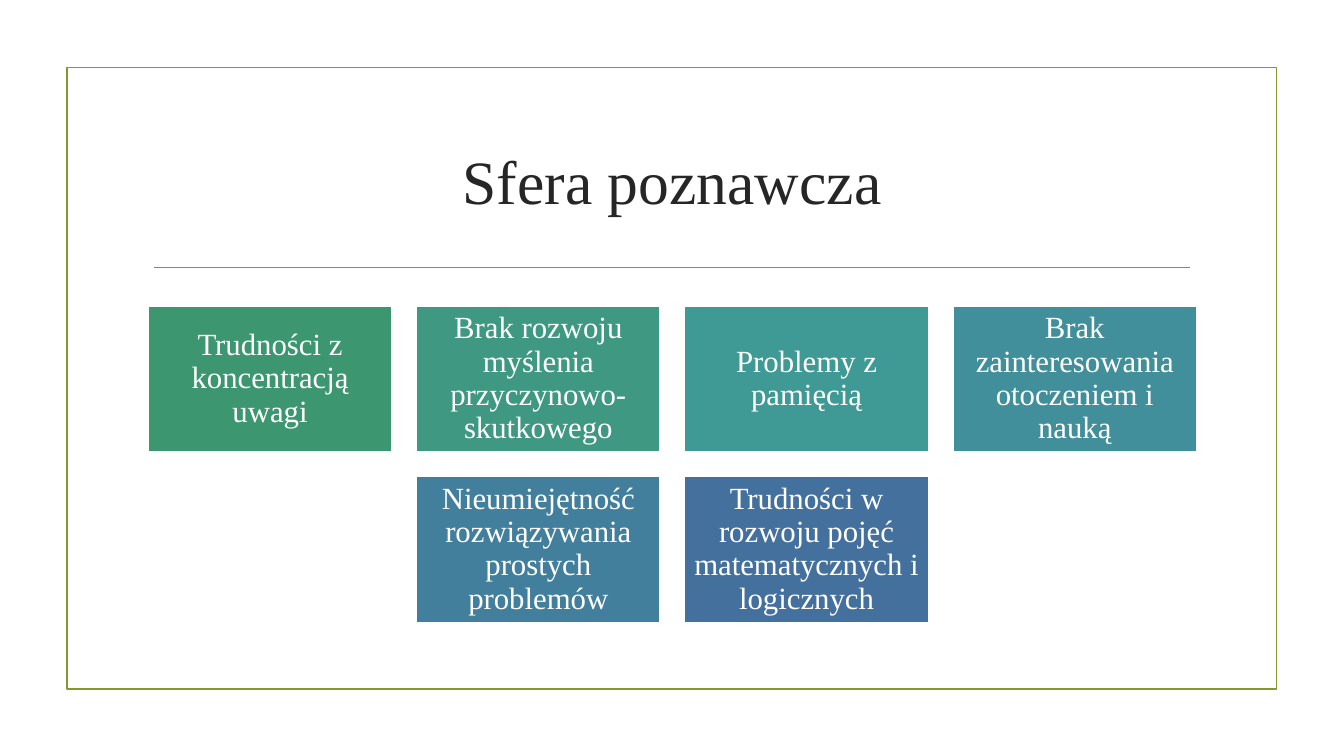
from dataclasses import dataclass
from lxml.etree import SubElement
from pptx import Presentation
from pptx.dml.color import RGBColor
from pptx.enum.shapes import MSO_CONNECTOR, MSO_SHAPE
from pptx.enum.text import MSO_ANCHOR, MSO_AUTO_SIZE, PP_ALIGN
from pptx.oxml.ns import qn
from pptx.util import Pt


@dataclass(frozen=True)
class Theme:
    font: str = "Times New Roman"
    title: int = 44
    body: int = 22
    line: float = 1.25
    ink: str = "262626"
    olive: str = "83992A"
    white: str = "FFFFFF"


THEME = Theme()

CARDS = [
    ("Trudności z koncentracją uwagi", "3C9770"),
    ("Brak rozwoju myślenia przyczynowo-skutkowego", "3E9882"),
    ("Problemy z pamięcią", "3F9995"),
    ("Brak zainteresowania otoczeniem i nauką", "418F9B"),
    ("Nieumiejętność rozwiązywania prostych problemów", "427F9C"),
    ("Trudności w rozwoju pojęć matematycznych i logicznych", "44709D"),
]


def color(code):
    return RGBColor.from_string(code)


def stroke(line, code):
    line.color.rgb = color(code)
    line.width = Pt(THEME.line)


def write(shape, text, size, code, inset, space):
    frame = shape.text_frame
    frame.text = text
    frame.word_wrap = True
    frame.auto_size = MSO_AUTO_SIZE.NONE
    frame.vertical_anchor = MSO_ANCHOR.MIDDLE
    frame.margin_left = frame.margin_right = Pt(inset)
    frame.margin_top = frame.margin_bottom = Pt(inset)
    para = frame.paragraphs[0]
    para.alignment = PP_ALIGN.CENTER
    para.line_spacing = space
    font = para.runs[0].font
    font.name, font.size = THEME.font, Pt(size)
    font.color.rgb = color(code)


def block(slide, left, top, width, height):
    shape = slide.shapes.add_shape(
        MSO_SHAPE.RECTANGLE, Pt(left), Pt(top), Pt(width), Pt(height))
    shape.shadow.inherit = False
    return shape


# Outer frame
def border(slide, left, top, width, height):
    shape = block(slide, left, top, width, height)
    shape.fill.background()
    stroke(shape.line, THEME.olive)


# Title with the rule below it
def header(slide, left, top, width, height):
    title = slide.shapes.title
    title.left, title.top = Pt(left), Pt(top)
    title.width, title.height = Pt(width), Pt(height)
    write(title, "Sfera poznawcza", THEME.title, THEME.ink, 4, 1.0)

    inset, base = 8, Pt(top + height + 11)
    rule = slide.shapes.add_connector(
        MSO_CONNECTOR.STRAIGHT,
        Pt(left + inset), base, Pt(left + width - inset), base)
    stroke(rule.line, THEME.olive)
    SubElement(rule._element.spPr, qn("a:effectLst"))


# Cards in rows, each row centred in the box
def grid(slide, left, top, width, height, cols=4, gap=17.4):
    rows = -(-len(CARDS) // cols)
    wide = (width - gap * (cols - 1)) / cols
    high = (height - gap * (rows - 1)) / rows
    for i, (text, fill) in enumerate(CARDS):
        row, col = divmod(i, cols)
        count = min(cols, len(CARDS) - row * cols)
        start = left + (cols - count) * (wide + gap) / 2
        card = block(slide, start + col * (wide + gap),
                     top + row * (high + gap), wide, high)
        card.fill.solid()
        card.fill.fore_color.rgb = color(fill)
        stroke(card.line, THEME.white)
        write(card, text, THEME.body, THEME.white, 6.6, 0.9)


def main():
    deck = Presentation()
    deck.slide_width, deck.slide_height = Pt(960), Pt(540)
    slide = deck.slides.add_slide(deck.slide_layouts[5])
    border(slide, 47.8, 48.2, 864, 444.2)
    header(slide, 102.2, 77, 756, 103)
    grid(slide, 105.8, 218.4, 749, 226.2)
    deck.save("out.pptx")


if __name__ == "__main__":
    main()
